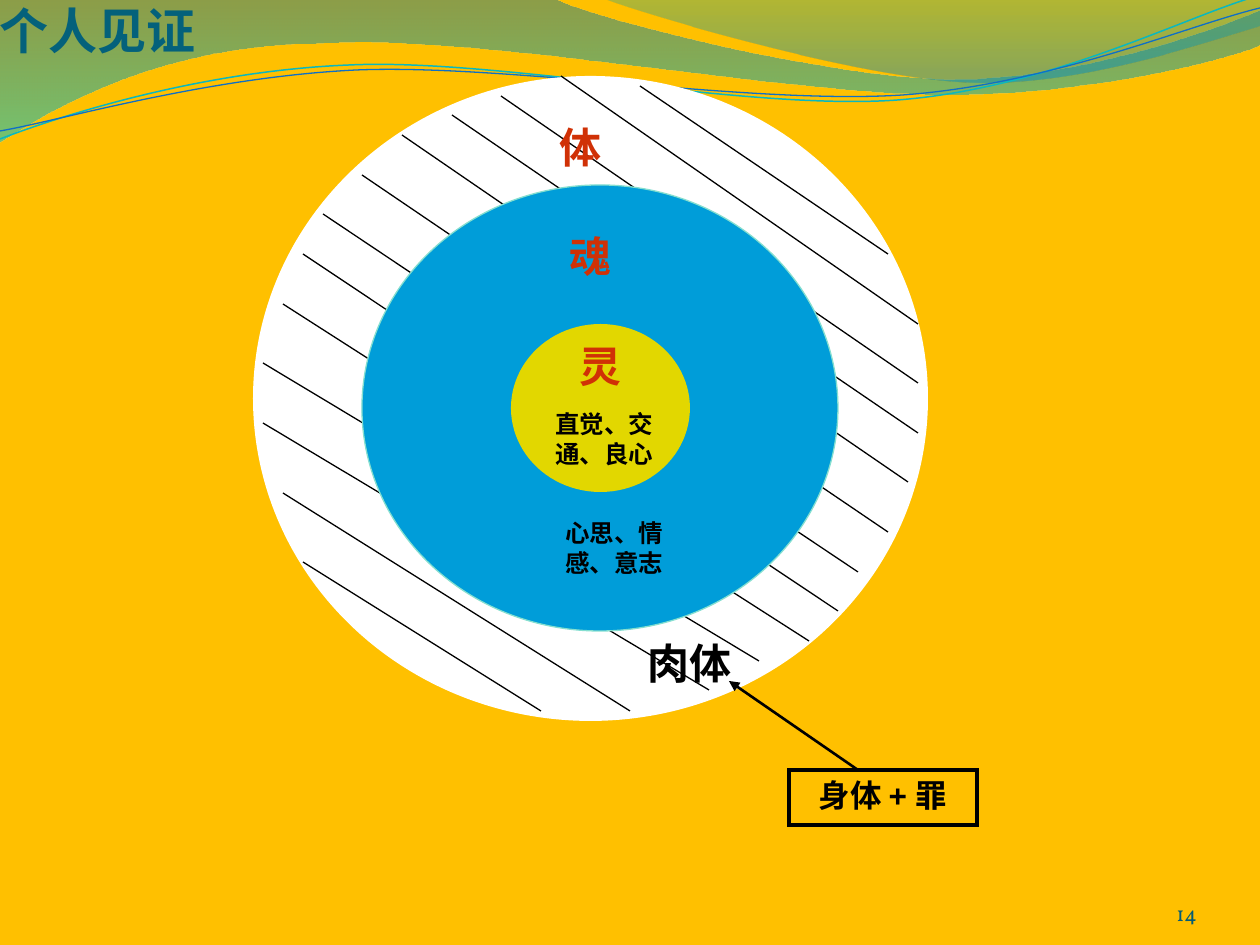
from lxml.etree import SubElement
from pptx import Presentation
from pptx.dml.color import RGBColor
from pptx.enum.shapes import MSO_CONNECTOR as Connector, MSO_SHAPE as Shape
from pptx.enum.text import MSO_ANCHOR as Anchor, PP_ALIGN as Align
from pptx.oxml.ns import qn
from pptx.util import Pt

PX = 914400 / 126
WIDTH, HEIGHT = 1260, 945

AMBER = RGBColor(0xFF, 0xC0, 0x00)
WHITE = RGBColor(0xFF, 0xFF, 0xFF)
BLACK = RGBColor(0x00, 0x00, 0x00)
RED = RGBColor(0xD0, 0x31, 0x06)
BLUE = RGBColor(0x00, 0x9D, 0xD9)
MINT = RGBColor(0x85, 0xDF, 0xD0)
LIME = RGBColor(0xE2, 0xD7, 0x00)
TITLE_TEAL = RGBColor(0x04, 0x61, 0x7B)
NUMBER_TEAL = RGBColor(0x04, 0x5C, 0x75)
CURVE_TEAL = RGBColor(0x0A, 0xB8, 0xBF)
CURVE_BLUE = RGBColor(0x0F, 0x6F, 0xC6)

# Gradient stops: position, colour, opacity in percent
LEFT_STOPS = [(0, RGBColor(0x00, 0x74, 0xA1), 45), (1, RGBColor(0x00, 0xC6, 0xCF), 55)]
RIGHT_STOPS = [(0, RGBColor(0x00, 0xA1, 0xA9), 30), (0.8, RGBColor(0x00, 0x8B, 0xBF), 45)]

# Steps of an outline: one point is a straight line, three points are a curve
LEFT_WAVE = [
    [(0, -1)], [(554, -1)],
    [(600, 21), (837, 79), (955, 79)], [(1075, 79), (1207, 33), (1260, 11)],
    [(1261, 45)],
    [(1240, 55), (1096, 96), (940, 94)], [(784, 94), (481, 35), (324, 43)],
    [(163, 44), (58, 105), (-1, 142)],
]
RIGHT_WAVE = [
    [(604, -1)],
    [(641, 14), (859, 78), (969, 82)], [(1079, 87), (1211, 40), (1260, 26)],
    [(1260, 0)],
]
TEAL_CURVE = [
    [(0, 139)],
    [(60, 116), (199, 71), (349, 65)], [(498, 58), (747, 111), (898, 100)],
    [(1050, 88), (1182, 18), (1257, -4)],
]
BLUE_CURVE = [
    [(0, 131)],
    [(59, 121), (207, 77), (357, 70)], [(508, 64), (752, 105), (903, 95)],
    [(1053, 84), (1186, 26), (1260, 8)],
]

# Hatching from left end to right end, inside the body circle
HATCHING = [
    (50, 486, 288, 635), (30, 417, 377, 635), (10, 347, 456, 614),
    (10, 287, 506, 585), (30, 228, 556, 565), (50, 178, 585, 535),
    (70, 138, 605, 496), (109, 99, 635, 456), (149, 59, 655, 406),
    (199, 39, 665, 357), (248, 20, 665, 307), (308, 0, 665, 248),
    (387, 10, 635, 178),
]


def emu(*lengths):
    return [round(length * PX) for length in lengths]


def shift(box, left, top, width, height):
    return box[0] + left, box[1] + top, width, height


def add_outline(page, box, steps, close):
    """Draw straight segments through every point, then join each three to a curve."""
    points = [(x + box[0], y + box[1]) for step in steps for x, y in step]
    builder = page.shapes.build_freeform(*points[0], scale=PX)
    builder.add_line_segments(points[1:], close=close)
    outline = builder.convert_to_shape()
    outline.shadow.inherit = False
    segments = iter(list(outline._element.iter(qn("a:lnTo"))))
    for step in steps[1:]:
        first, *others = [next(segments) for _ in step]
        if others:
            first.tag = qn("a:cubicBezTo")
        for segment in others:
            first.append(segment[0])
            segment.getparent().remove(segment)
    return outline


def add_wave(page, box, steps, stops):
    wave = add_outline(page, box, steps, True)
    wave.line.fill.background()
    wave.fill.gradient()
    wave.fill.gradient_angle = 270
    for stop, (position, color, _) in zip(wave.fill.gradient_stops, stops):
        stop.position = position
        stop.color.rgb = color
    colors = wave._element.spPr.iter(qn("a:srgbClr"))
    for color, (_, _, opacity) in zip(colors, stops):
        SubElement(color, qn("a:alpha"), val=str(opacity * 1000))


def add_curve(page, box, steps, color, weight):
    curve = add_outline(page, box, steps, False)
    curve.fill.background()
    curve.line.color.rgb = color
    curve.line.width = Pt(weight)


def add_shape(page, kind, box, fill=None, line=None, weight=0.75):
    shape = page.shapes.add_shape(kind, *emu(*box))
    shape.shadow.inherit = False
    if fill is None:
        shape.fill.background()
    else:
        shape.fill.solid()
        shape.fill.fore_color.rgb = fill
    if line is None:
        shape.line.fill.background()
    else:
        shape.line.color.rgb = line
        shape.line.width = Pt(weight)
    return shape


def add_line(page, start, end, weight):
    line = page.shapes.add_connector(Connector.STRAIGHT, *emu(*start, *end))
    line.line.color.rgb = BLACK
    line.line.width = Pt(weight)
    SubElement(line._element.spPr, qn("a:effectLst"))
    return line


def write(shape, text, size, color=BLACK, name="Arial", bold=True, align=Align.CENTER):
    frame = shape.text_frame
    frame.word_wrap = True
    para = frame.paragraphs[0]
    para.text = text
    para.alignment = align
    para.font.size = Pt(size)
    para.font.name = name
    para.font.bold = bold
    para.font.color.rgb = color
    return frame


def add_text(page, box, *args, **style):
    return write(page.shapes.add_textbox(*emu(*box)), *args, **style)


def add_waves(page, box):
    add_wave(page, box, LEFT_WAVE, LEFT_STOPS)
    add_wave(page, box, RIGHT_WAVE, RIGHT_STOPS)
    add_curve(page, box, TEAL_CURVE, CURVE_TEAL, 0.85)
    add_curve(page, box, BLUE_CURVE, CURVE_BLUE, 0.75)


def add_heading(page, box):
    frame = add_text(page, box, "个人见证", 28, TITLE_TEAL, "Calibri", align=Align.LEFT)
    frame.vertical_anchor = Anchor.BOTTOM
    frame.margin_left = frame.margin_right = frame.margin_bottom = 0


def add_page_number(page, box):
    frame = add_text(page, box, "14", 12, NUMBER_TEAL, "Vollkorn", False, Align.RIGHT)
    frame.vertical_anchor = Anchor.BOTTOM
    frame.margin_left = frame.margin_right = frame.margin_top = frame.margin_bottom = 0


def add_sin_note(page, box):
    """Framed note with an arrow up to the flesh label."""
    note = add_shape(page, Shape.RECTANGLE, box, line=BLACK, weight=2.25)
    SubElement(note.line._get_or_add_ln(), qn("a:miter"), lim="800000")
    write(note, "身体 + 罪", 18).vertical_anchor = Anchor.TOP
    left, top = box[:2]
    arrow = add_line(page, (left + 69, top), (left - 60, top - 89), 1.5)
    SubElement(arrow.line._get_or_add_ln(), qn("a:tailEnd"), type="triangle")


def add_circles(page, box):
    """Body, soul and spirit as nested circles with their labels."""
    left, top = box[:2]
    add_shape(page, Shape.OVAL, box, WHITE)
    add_text(page, shift(box, 377, 555, 119, 63), "肉体", 24)
    for x1, y1, x2, y2 in HATCHING:
        add_line(page, (left + x1, top + y1), (left + x2, top + y2), 0.75)
    add_shape(page, Shape.OVAL, shift(box, 109, 109, 476, 446), BLUE, MINT)
    add_shape(page, Shape.OVAL, shift(box, 258, 248, 179, 168), LIME)
    for text, x, y in (("灵", 308, 258), ("魂", 298, 148), ("体", 288, 39)):
        add_text(page, shift(box, x, y, 79, 63), text, 24, RED)
    for text, x, y in (("直觉、交通、良心", 267, 327), ("心思、情感、意志", 277, 436)):
        frame = add_text(page, shift(box, x, y, 169, 72), text, 14)
        frame.margin_left = frame.margin_right = emu(28)[0]


def main():
    deck = Presentation()
    deck.slide_width, deck.slide_height = emu(WIDTH, HEIGHT)
    page = deck.slides.add_slide(deck.slide_layouts[6])
    page.background.fill.solid()
    page.background.fill.fore_color.rgb = AMBER
    add_waves(page, (0, 0, WIDTH, 142))
    add_page_number(page, (1092, 876, 105, 50))
    add_heading(page, (0, 0, 238, 59))
    add_circles(page, (253, 76, 675, 645))
    add_sin_note(page, (789, 770, 188, 55))
    deck.save("out.pptx")


if __name__ == "__main__":
    main()
